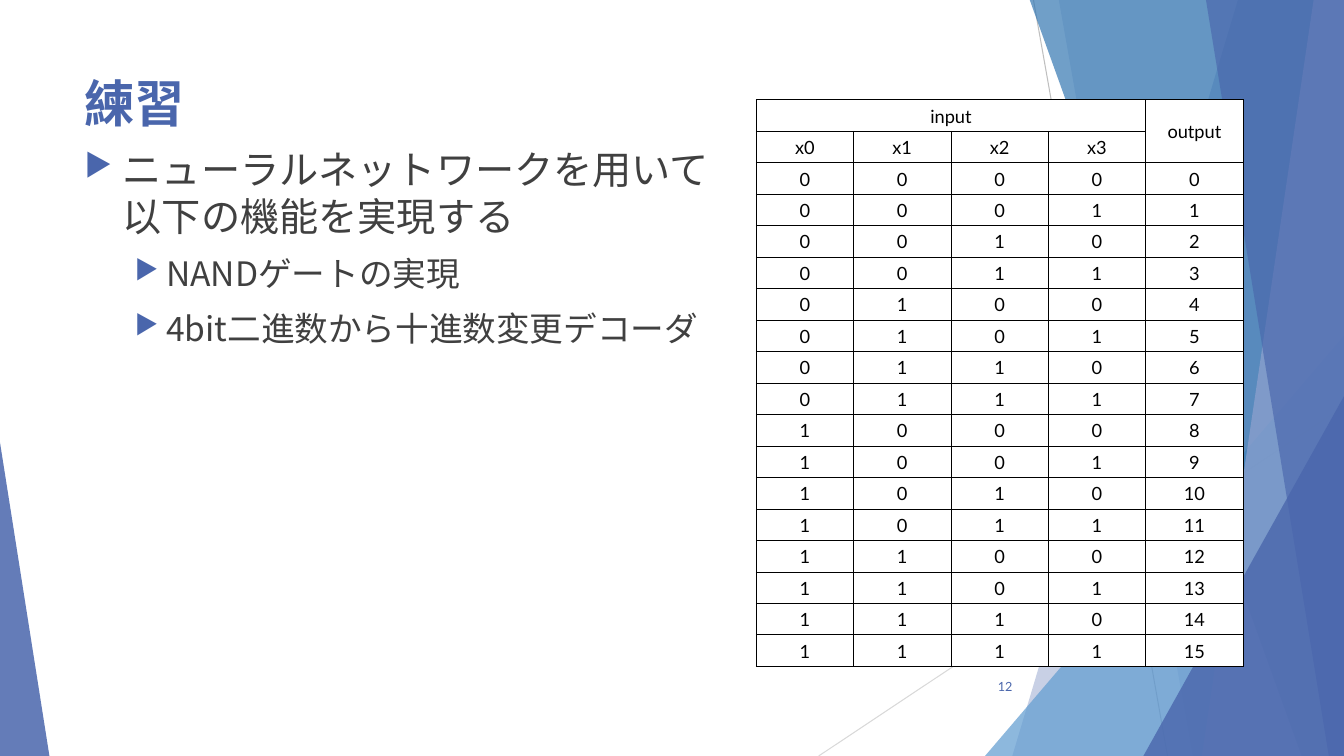
import dataclasses

import lxml.etree
import pptx
import pptx.dml.color
import pptx.enum.shapes
import pptx.enum.text
import pptx.oxml
import pptx.oxml.ns
import pptx.util

Inches = pptx.util.Inches
Pt = pptx.util.Pt
Align = pptx.enum.text.PP_ALIGN
Anchor = pptx.enum.text.MSO_ANCHOR


def rgb(color):
    return pptx.dml.color.RGBColor.from_string(color)


def add_element(parent, tag, **attributes):
    return lxml.etree.SubElement(parent, pptx.oxml.ns.qn(tag), attributes)


@dataclasses.dataclass(frozen=True)
class Theme:
    japanese: str = "Noto Sans CJK JP"
    latin: str = "Lato"
    indigo: str = "4A66AC"
    lavender: str = "90A2CF"
    sky: str = "629DD1"
    ocean: str = "3477B2"
    body: str = "404040"
    black: str = "000000"
    white: str = "FFFFFF"
    gray: str = "BFBFBF"
    light_gray: str = "D9D9D9"
    title_size: int = 36
    level_sizes: tuple = (28, 24)
    table_size: int = 13
    number_size: int = 9


class SlideBuilder:
    def __init__(self, theme, page):
        self.theme = theme
        self.page = page

    def line(self, start, end, color):
        connector = self.page.shapes.add_connector(
            pptx.enum.shapes.MSO_CONNECTOR.STRAIGHT, *map(Inches, start + end))
        connector.line.color.rgb = rgb(color)
        connector.line.width = Pt(0.75)
        add_element(connector.element.spPr, "a:effectLst")

    def paint(self, shape, color, opacity):
        shape.shadow.inherit = False
        shape.fill.solid()
        shape.fill.fore_color.rgb = rgb(color)
        shape.line.fill.background()
        tint = shape.element.spPr.find(".//" + pptx.oxml.ns.qn("a:srgbClr"))
        add_element(tint, "a:alpha", val=str(opacity * 1000))

    def band(self, top_left, bottom_left, color, opacity):
        top, bottom, right = -0.01, 7.5, 13.33
        outline = self.page.shapes.build_freeform(Inches(top_left), Inches(top))
        corners = [(right, top), (right, bottom), (bottom_left, bottom)]
        outline.add_line_segments([(Inches(x), Inches(y)) for x, y in corners])
        self.paint(outline.convert_to_shape(), color, opacity)

    def triangle(self, frame, apex, color, opacity):
        shape = self.page.shapes.add_shape(
            pptx.enum.shapes.MSO_SHAPE.ISOSCELES_TRIANGLE, *map(Inches, frame))
        shape.adjustments[0] = apex
        self.paint(shape, color, opacity)

    def span(self, para, text, size, font, color, bold=False):
        span = para.add_run()
        span.text = text
        span.font.size = Pt(size)
        span.font.name = font
        span.font.bold = bold
        span.font.color.rgb = rgb(color)
        add_element(span.font._element, "a:ea", typeface=font)

    def box(self, frame, anchor=Anchor.TOP):
        text_frame = self.page.shapes.add_textbox(*map(Inches, frame)).text_frame
        text_frame.word_wrap = True
        text_frame.vertical_anchor = anchor
        return text_frame

    def title(self, frame, text):
        theme = self.theme
        para = self.box(frame).paragraphs[0]
        self.span(para, text, theme.title_size, theme.japanese, theme.indigo, True)

    def page_number(self, frame, text):
        theme = self.theme
        para = self.box(frame, Anchor.MIDDLE).paragraphs[0]
        para.alignment = Align.RIGHT
        self.span(para, text, theme.number_size, theme.latin, theme.indigo)

    def bullets(self, frame, items):
        theme = self.theme
        indents = ((0.38, -0.38), (0.81, -0.31))
        box = self.box(frame)
        for index, (level, text) in enumerate(items):
            para = box.add_paragraph() if index else box.paragraphs[0]
            para.level = level
            properties = para._p.get_or_add_pPr()
            margin, indent = indents[level]
            properties.set("marL", str(Inches(margin)))
            properties.set("indent", str(Inches(indent)))
            add_element(add_element(properties, "a:buClr"), "a:srgbClr", val=theme.indigo)
            add_element(properties, "a:buSzPct", val="80000")
            add_element(properties, "a:buChar", char="▶")
            if index:
                para.space_before = Pt(10)
            self.span(para, text, theme.level_sizes[level], theme.japanese, theme.body)

    def cell(self, cell, text):
        theme = self.theme
        cell.margin_left = cell.margin_right = cell.margin_top = Inches(0.01)
        cell.margin_bottom = 0
        cell.vertical_anchor = Anchor.MIDDLE
        properties = cell._tc.get_or_add_tcPr()
        for side in ("a:lnL", "a:lnR", "a:lnT", "a:lnB"):
            border = add_element(properties, side, w=str(Pt(0.5)))
            add_element(add_element(border, "a:solidFill"), "a:srgbClr", val=theme.black)
        cell.fill.solid()
        cell.fill.fore_color.rgb = rgb(theme.white)
        if text:
            para = cell.text_frame.paragraphs[0]
            para.alignment = Align.CENTER
            self.span(para, text, theme.table_size, theme.latin, theme.black)

    def table(self, frame, rows, merges):
        table = self.page.shapes.add_table(
            len(rows), len(rows[0]), *map(Inches, frame)).table
        table.first_row = False
        table.horz_banding = False
        for row_index, row in enumerate(rows):
            for column_index, text in enumerate(row):
                self.cell(table.cell(row_index, column_index), text)
        for first, last in merges:
            table.cell(*first).merge(table.cell(*last))


def main():
    deck = pptx.Presentation()
    deck.slide_width = Inches(13.33)
    deck.slide_height = Inches(7.5)
    theme = Theme()
    slide = SlideBuilder(theme, deck.slides.add_slide(deck.slide_layouts[6]))

    slide.line((10.25, 0), (11.58, 7.5), theme.gray)
    slide.line((13.33, 4.03), (8.12, 7.5), theme.light_gray)
    slide.band(12.28, 10.04, theme.indigo, 30)
    slide.band(10.5, 11.83, theme.indigo, 20)
    slide.triangle((9.77, 3.33, 3.56, 4.17), 1, theme.sky, 72)
    slide.band(10.21, 12.91, theme.ocean, 70)
    slide.band(13.03, 11.92, theme.lavender, 70)
    slide.band(11.96, 13.18, theme.indigo, 65)
    slide.triangle((11.34, 3.93, 1.99, 3.57), 1, theme.indigo, 80)
    slide.triangle((0, 4.39, 0.49, 3.11), 0, theme.indigo, 85)

    slide.title((0.74, 0.67, 9.4, 1.44), "練習")
    slide.bullets((0.74, 1.39, 6.53, 5.32), [
        (0, "ニューラルネットワークを用いて以下の機能を実現する"),
        (1, "NANDゲートの実現"),
        (1, "4bit二進数から十進数変更デコーダ"),
    ])
    slide.page_number((9.39, 6.61, 0.75, 0.4), "12")

    header = [["input", "", "", "", "output"], ["x0", "x1", "x2", "x3", ""]]
    decoder = [[*f"{number:04b}", str(number)] for number in range(16)]
    slide.table((7.5, 0.99, 4.83, 5.62), header + decoder,
                [((0, 0), (0, 3)), ((0, 4), (1, 4))])
    deck.save("out.pptx")


if __name__ == "__main__":
    main()
